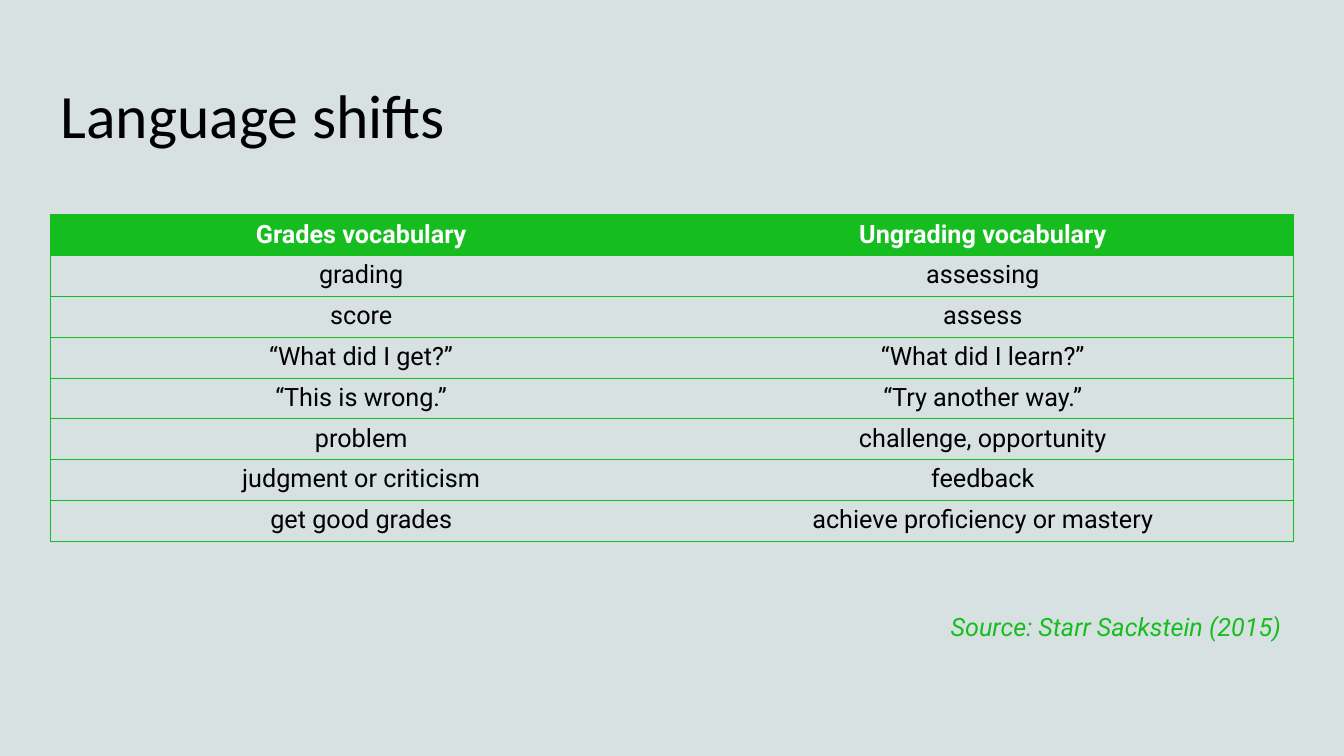
from lxml.etree import SubElement
from pptx import Presentation
from pptx.dml.color import RGBColor
from pptx.enum.text import MSO_ANCHOR, PP_ALIGN
from pptx.oxml.ns import qn
from pptx.util import Inches, Pt

COLORS = {"background": "D8E1E1", "green": "15BE1E", "black": "000000", "white": "FFFFFF"}
PLAIN_TABLE_STYLE = "{2D5ABB26-0587-4C30-8999-92F81FD0307C}"
VOCABULARY = [
    ("Grades vocabulary", "Ungrading vocabulary"),
    ("grading", "assessing"),
    ("score", "assess"),
    ("“What did I get?”", "“What did I learn?”"),
    ("“This is wrong.”", "“Try another way.”"),
    ("problem", "challenge, opportunity"),
    ("judgment or criticism", "feedback"),
    ("get good grades", "achieve proficiency or mastery"),
]


def color(name):
    return RGBColor.from_string(COLORS[name])


def write(text_frame, text, font_name, size, color_name, alignment=PP_ALIGN.LEFT):
    text_frame.text = text
    paragraph = text_frame.paragraphs[0]
    paragraph.alignment = alignment
    font = paragraph.font
    font.name, font.size = font_name, Pt(size)
    font.color.rgb = color(color_name)
    return font


def add_border(cell, side):
    """Draw a thin green line on one side (L, R, T or B) of a cell."""
    line = SubElement(cell._tc.get_or_add_tcPr(), qn(f"a:ln{side}"), w=str(Pt(0.5)))
    fill = SubElement(line, qn("a:solidFill"))
    SubElement(fill, qn("a:srgbClr"), val=COLORS["green"])


def place(shape, left, top, width, height):
    shape.left, shape.top = Inches(left), Inches(top)
    shape.width, shape.height = Inches(width), Inches(height)


def add_title(slide, text):
    title = slide.shapes.title
    place(title, 0.5, 0.4, 11.92, 1.45)
    title.text_frame.vertical_anchor = MSO_ANCHOR.MIDDLE
    write(title.text_frame, text, "Calibri", 44, "black")


def add_vocabulary_table(slide, rows):
    row_height = 0.405
    frame = slide.shapes.add_table(
        len(rows), 2, Inches(0.5), Inches(2.13), Inches(12.33), Inches(row_height * len(rows)))
    table = frame.table
    table.horz_banding = False
    table._tbl.tblPr.find(qn("a:tableStyleId")).text = PLAIN_TABLE_STYLE
    for row_index, words in enumerate(rows):
        is_header = row_index == 0
        for column_index, word in enumerate(words):
            cell = table.cell(row_index, column_index)
            for side in ("LTB", "RTB")[column_index]:
                add_border(cell, side)
            if is_header:
                cell.fill.solid()
                cell.fill.fore_color.rgb = color("green")
            else:
                cell.fill.background()
            font = write(cell.text_frame, word, "Roboto", 18,
                         "white" if is_header else "black", PP_ALIGN.CENTER)
            font.bold = is_header


def add_source(slide, text):
    box = slide.shapes.add_textbox(Inches(9.33), Inches(6.02), Inches(4), Inches(0.4))
    box.text_frame.word_wrap = True
    write(box.text_frame, text, "Roboto", 18, "green").italic = True


def main():
    presentation = Presentation()
    presentation.slide_width, presentation.slide_height = Inches(13.33), Inches(7.5)
    slide = presentation.slides.add_slide(presentation.slide_layouts[5])
    slide.background.fill.solid()
    slide.background.fill.fore_color.rgb = color("background")
    add_title(slide, "Language shifts")
    add_vocabulary_table(slide, VOCABULARY)
    add_source(slide, "Source: Starr Sackstein (2015)")
    presentation.save("out.pptx")


if __name__ == "__main__":
    main()
